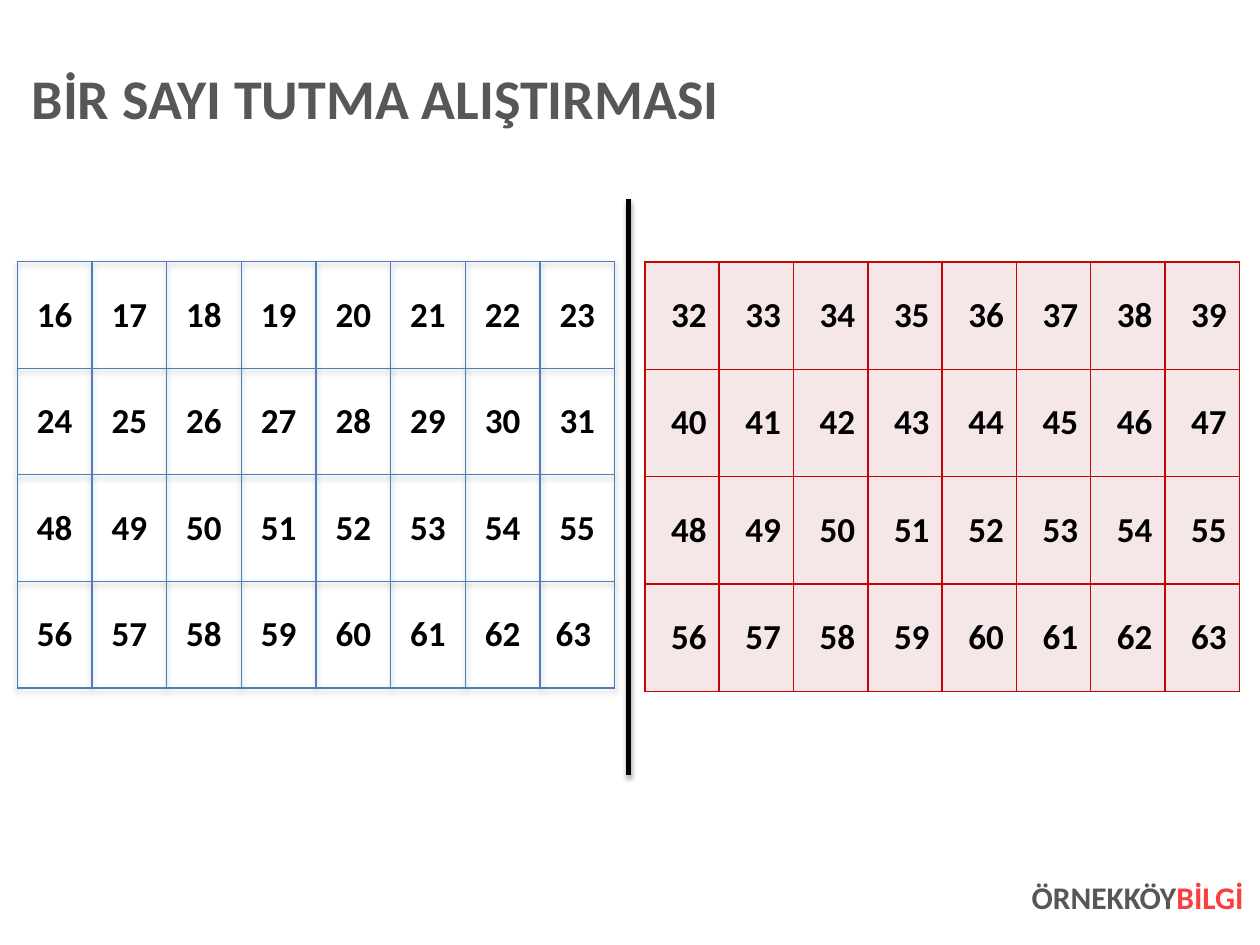
import pptx
import pptx.util
import pptx.dml.color
import pptx.enum.shapes
import pptx.enum.text
import pptx.oxml
import pptx.oxml.ns

Cm, Pt = pptx.util.Cm, pptx.util.Pt
ALIGN = pptx.enum.text.PP_ALIGN
MID = pptx.enum.text.MSO_ANCHOR.MIDDLE
NS = pptx.oxml.ns.nsdecls("a")
PLAIN = "{2D5ABB26-0587-4C30-8999-92F81FD0307C}"
BLACK, GREY, RED = "000000", "575757", "FB3E3E"


def tint(code):
    return pptx.dml.color.RGBColor.from_string(code)


def style(font, size, code):
    font.name, font.size, font.bold = "Calibri", Pt(size), True
    font.color.rgb = tint(code)


def shade():
    """Soft shadow that falls straight down."""
    return pptx.oxml.parse_xml(
        f'<a:effectLst {NS}><a:outerShdw blurRad="{Pt(3.1)}" dist="{Pt(1.8)}" '
        'dir="5400000" rotWithShape="0"><a:srgbClr val="000000">'
        '<a:alpha val="35000"/></a:srgbClr></a:outerShdw></a:effectLst>')


def write(slide, box, parts, size, pad=0):
    """Text box whose single paragraph holds (text, colour) parts."""
    frame = slide.shapes.add_textbox(*map(Cm, box)).text_frame
    frame.word_wrap = True
    frame.margin_left = frame.margin_right = 0
    frame.margin_top = frame.margin_bottom = Cm(pad)
    para = frame.paragraphs[0]
    for text, code in parts:
        run = para.add_run()
        run.text = text
        style(run.font, size, code)
    return frame, para


def title(slide, box):
    frame, para = write(slide, box, [("BİR SAYI TUTMA ALIŞTIRMASI", GREY)], 32, 0.13)
    frame.vertical_anchor = MID
    para.line_spacing = 0.9


def footer(slide, box):
    para = write(slide, box, [("ÖRNEKKÖY", GREY), ("BİLGİ", RED)], 18)[1]
    para.alignment = ALIGN.RIGHT


def border(cell, code, width):
    props = cell._tc.get_or_add_tcPr()
    for i, side in enumerate(("lnL", "lnR", "lnT", "lnB")):
        props.insert(i, pptx.oxml.parse_xml(
            f'<a:{side} {NS} w="{Pt(width)}"><a:solidFill>'
            f'<a:srgbClr val="{code}"/></a:solidFill></a:{side}>'))


def grid(slide, box, items, align, edge, width, fill=None, cols=8):
    """Number card: items fill the rows from left to right."""
    rows = len(items) // cols
    table = slide.shapes.add_table(rows, cols, *map(Cm, box)).table
    table.first_row = table.horz_banding = False
    props = table._tbl.tblPr
    props.find(pptx.oxml.ns.qn("a:tableStyleId")).text = PLAIN
    for col in table.columns:
        col.width = Cm(box[2] / cols)
    for row in table.rows:
        row.height = Cm(box[3] / rows)
    for cell, text in zip(table.iter_cells(), items):
        cell.vertical_anchor = MID
        if fill:
            cell.fill.solid()
            cell.fill.fore_color.rgb = tint(fill)
        else:
            cell.fill.background()
        border(cell, edge, width)
        para = cell.text_frame.paragraphs[0]
        para.text = text
        para.alignment = align
        indent = para._p.get_or_add_pPr()
        indent.set("marL", str(Cm(0.95)))
        indent.set("indent", str(-Cm(0.95)))
        style(para.font, 20, BLACK)
    if not fill:
        props.insert(0, shade())


def rule(slide, x, top, end):
    line = slide.shapes.add_connector(
        pptx.enum.shapes.MSO_CONNECTOR.STRAIGHT, Cm(x), Cm(top), Cm(x), Cm(end))
    line.line.color.rgb = tint(BLACK)
    line.line.width = Pt(3)
    line._element.spPr.append(shade())


def card(bit):
    """Numbers below 64 whose binary form has this bit."""
    return [str(n) for n in range(64) if n & bit]


def main():
    deck = pptx.Presentation()
    deck.slide_width, deck.slide_height = Cm(25.4), Cm(19.05)
    slide = deck.slides.add_slide(deck.slide_layouts[6])

    footer(slide, (19.2, 17.7, 5.87, 1.42))

    # Number cards
    left = card(16)
    left[-1] += " "
    grid(slide, (0.35, 5.28, 12.04, 8.59), left, ALIGN.CENTER, "4B7EBC", 0.75)
    grid(slide, (13, 5.28, 11.99, 8.66), card(32), ALIGN.RIGHT, "C40505", 1, "F5E7E7")

    # Divider and heading
    rule(slide, 12.67, 4.01, 15.62)
    title(slide, (0.64, 1.14, 24.49, 1.8))

    deck.save("out.pptx")


if __name__ == "__main__":
    main()
